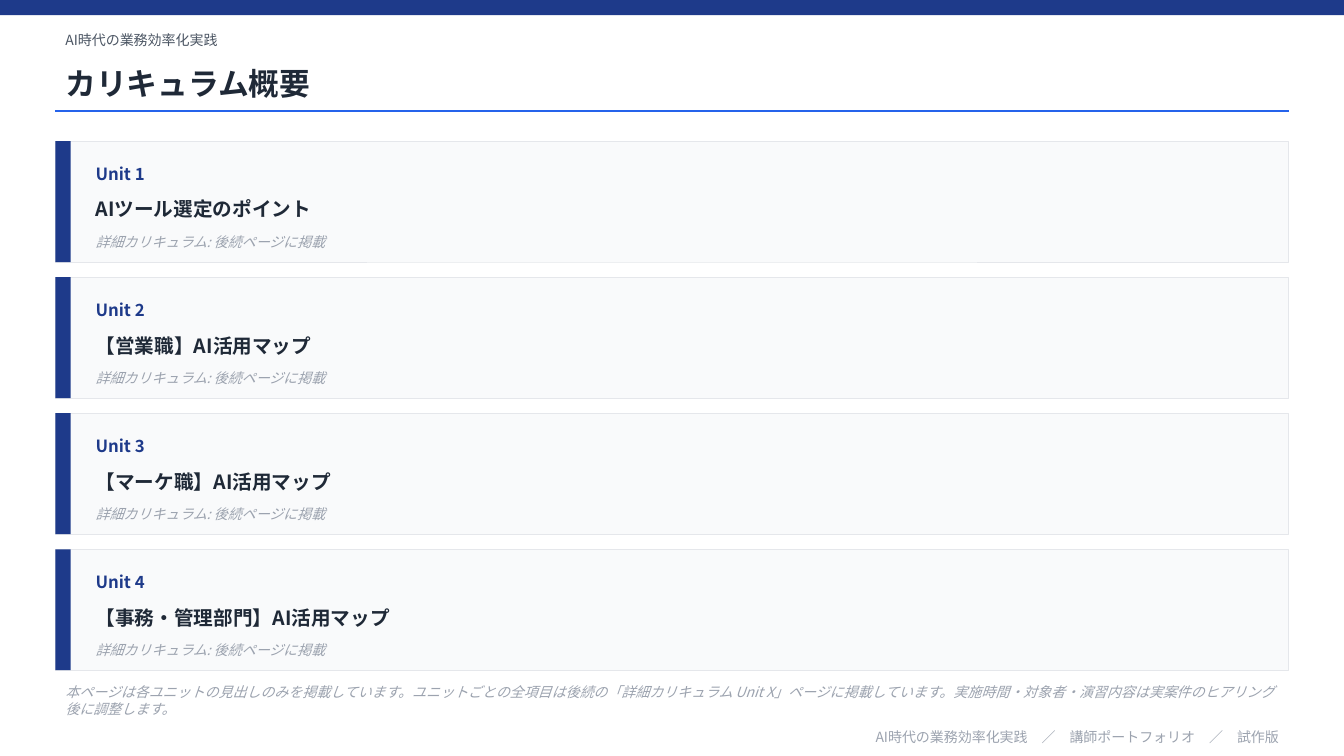
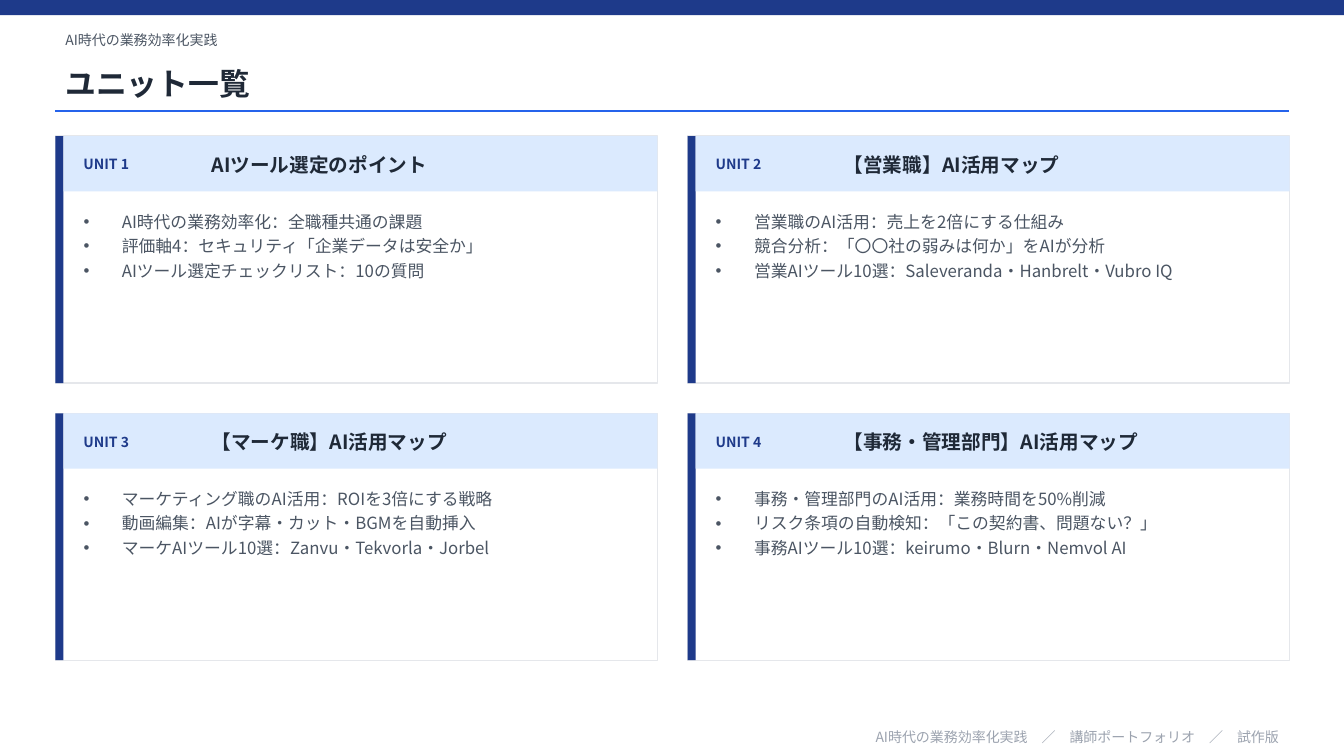
from lxml import etree
from pptx import Presentation, util as u
from pptx.dml.color import RGBColor
from pptx.enum import shapes, text
from pptx.oxml import ns

EMU_PER_PX = 9144  # 100 px to the inch
SLIDE_WIDTH, SLIDE_HEIGHT = 1333, 750
LEFT, WIDTH = 55, 1223

FONT, BULLET_FONT = "Noto Sans CJK JP", "Arial"
NAVY, BLUE, PALE_BLUE = "1E3A8A", "2563EB", "DBEAFE"
INK, GRAY, MUTED = "1F2937", "4B5563", "9CA3AF"
BORDER, PANEL, WHITE = "E5E7EB", "F9FAFB", "FFFFFF"

COURSE = "AI時代の業務効率化実践"
FOOTER = COURSE + "　／　講師ポートフォリオ　／　試作版"
DETAIL = "詳細カリキュラム: 後続ページに掲載"
NOTE = (
    "本ページは各ユニットの見出しのみを掲載しています。"
    "ユニットごとの全項目は後続の「詳細カリキュラム Unit X」ページに掲載しています。"
    "実施時間・対象者・演習内容は実案件のヒアリング後に調整します。"
)
UNITS = [
    ("AIツール選定のポイント", [
        "AI時代の業務効率化：全職種共通の課題",
        "評価軸4：セキュリティ「企業データは安全か」",
        "AIツール選定チェックリスト：10の質問",
    ]),
    ("【営業職】AI活用マップ", [
        "営業職のAI活用：売上を2倍にする仕組み",
        "競合分析：「〇〇社の弱みは何か」をAIが分析",
        "営業AIツール10選：Saleveranda・Hanbrelt・Vubro IQ",
    ]),
    ("【マーケ職】AI活用マップ", [
        "マーケティング職のAI活用：ROIを3倍にする戦略",
        "動画編集：AIが字幕・カット・BGMを自動挿入",
        "マーケAIツール10選：Zanvu・Tekvorla・Jorbel",
    ]),
    ("【事務・管理部門】AI活用マップ", [
        "事務・管理部門のAI活用：業務時間を50%削減",
        "リスク条項の自動検知：「この契約書、問題ない？」",
        "事務AIツール10選：keirumo・Blurn・Nemvol AI",
    ]),
]


def px(length):
    return u.Emu(length * EMU_PER_PX)


def color(value):
    return RGBColor.from_string(value)


class SlideBuilder:
    def __init__(self):
        self.deck = Presentation()
        self.deck.slide_width = px(SLIDE_WIDTH)
        self.deck.slide_height = px(SLIDE_HEIGHT)
        self.slide = None

    def start(self, title):
        """Add a slide with the shared band, heading, rule and footer."""
        self.slide = self.deck.slides.add_slide(self.deck.slide_layouts[6])
        self.rect(0, 0, SLIDE_WIDTH, 15, NAVY)
        self.label(LEFT, 25, WIDTH, 30, COURSE, 10, GRAY)
        self.label(LEFT, 55, WIDTH, 55, title, 22, INK, bold=True)
        self.rule(LEFT, 110, WIDTH)
        self.label(LEFT, 720, WIDTH, 22, FOOTER, 10, MUTED,
                   align=text.PP_ALIGN.RIGHT)

    def rect(self, left, top, width, height, fill, line=None, weight=1):
        box = self.slide.shapes.add_shape(
            shapes.MSO_SHAPE.RECTANGLE, px(left), px(top), px(width), px(height))
        box.shadow.inherit = False
        box.fill.solid()
        box.fill.fore_color.rgb = color(fill)
        if line:
            box.line.color.rgb = color(line)
            box.line.width = u.Pt(weight)
        else:
            box.line.fill.background()

    def rule(self, left, top, width):
        line = self.slide.shapes.add_connector(
            shapes.MSO_CONNECTOR.STRAIGHT,
            px(left), px(top), px(left + width), px(top))
        line.line.color.rgb = color(BLUE)
        line.line.width = u.Pt(1)
        etree.SubElement(line._element.spPr, ns.qn("a:effectLst"))

    def text_frame(self, left, top, width, height, content):
        box = self.slide.shapes.add_textbox(
            px(left), px(top), px(width), px(height))
        frame = box.text_frame
        frame.word_wrap = True
        frame.text = content
        return frame

    def style(self, para, size, ink, bold=False, italic=False):
        for span in para.runs:
            font = span.font
            font.size, font.bold, font.italic = u.Pt(size), bold, italic
            font.color.rgb = color(ink)
            font.name = FONT
            east_asian = etree.SubElement(
                span._r.get_or_add_rPr(), ns.qn("a:ea"))
            east_asian.set("typeface", FONT)

    def label(self, left, top, width, height, content, size, ink,
              bold=False, italic=False, align=text.PP_ALIGN.LEFT):
        frame = self.text_frame(left, top, width, height, content)
        frame.vertical_anchor = text.MSO_ANCHOR.MIDDLE
        para = frame.paragraphs[0]
        para.alignment = align
        self.style(para, size, ink, bold, italic)

    def bullets(self, left, top, width, height, items):
        frame = self.text_frame(left, top, width, height, "\n".join(items))
        for para in frame.paragraphs:
            para.space_after = u.Pt(3)
            properties = para._p.get_or_add_pPr()
            properties.set("marL", str(px(38)))
            properties.set("indent", str(px(-38)))
            bullet_font = etree.SubElement(properties, ns.qn("a:buFont"))
            bullet_font.set("typeface", BULLET_FONT)
            bullet = etree.SubElement(properties, ns.qn("a:buChar"))
            bullet.set("char", "•")
            self.style(para, 12, GRAY)

    def unit_row(self, top, number, title):
        text_left, text_width = LEFT + 30, WIDTH - 50
        self.rect(LEFT, top, WIDTH, 120, PANEL, BORDER, 0.5)
        self.rect(LEFT, top, 15, 120, NAVY)
        self.label(text_left, top + 12, 150, 40, f"Unit {number}", 12, NAVY,
                   bold=True)
        self.label(text_left, top + 45, text_width, 45, title, 14, INK,
                   bold=True)
        self.label(text_left, top + 85, text_width, 30, DETAIL, 10, MUTED,
                   italic=True)

    def unit_card(self, left, top, width, number, title, items):
        height, bar = 245, 8
        self.rect(left, top, width, height, WHITE, BORDER)
        self.rect(left, top, bar, height, NAVY)
        self.rect(left + bar, top, width - bar, 55, PALE_BLUE)
        self.label(left + 18, top + 8, 120, 40, f"UNIT {number}", 10, NAVY,
                   bold=True)
        self.label(left + 145, top + 8, width - 160, 40, title, 14, INK,
                   bold=True)
        self.bullets(left + 18, top + 70, width - 36, 160, items)


def build_curriculum(builder):
    builder.start("カリキュラム概要")
    for index, (title, _) in enumerate(UNITS):
        builder.unit_row(140 + index * 135, index + 1, title)
    builder.label(LEFT, 675, WIDTH, 40, NOTE, 10, MUTED, italic=True)


def build_unit_list(builder):
    builder.start("ユニット一覧")
    card_width, gap = 597, 30
    for index, (title, items) in enumerate(UNITS):
        row, column = divmod(index, 2)
        builder.unit_card(LEFT + column * (card_width + gap), 135 + row * 275,
                          card_width, index + 1, title, items)


def main():
    builder = SlideBuilder()
    build_curriculum(builder)
    build_unit_list(builder)
    builder.deck.save("out.pptx")


if __name__ == "__main__":
    main()
